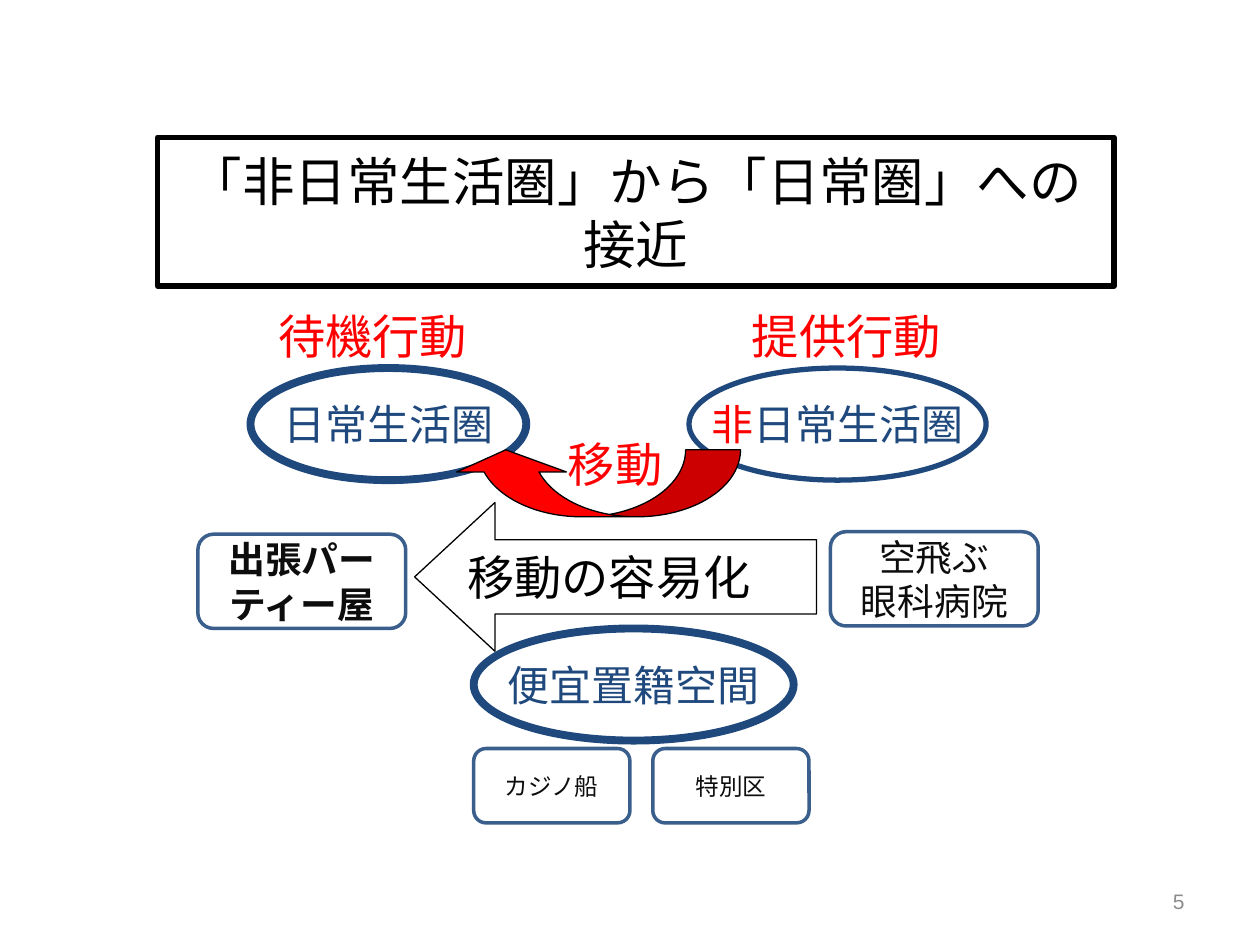
from dataclasses import dataclass

from pptx import Presentation
from pptx.dml.color import RGBColor
from pptx.enum import shapes, text
from pptx.util import Cm, Pt

Kind = shapes.MSO_SHAPE
Align = text.PP_ALIGN


@dataclass(frozen=True)
class Theme:
    font: str = "Calibri"
    number_font: str = "Arial"
    black: str = "000000"
    white: str = "FFFFFF"
    ink: str = "0D0D0D"
    red: str = "FF0000"
    navy: str = "1F497D"
    box_line: str = "3A5F8C"
    grey: str = "8C8C8C"
    title: float = 30
    label: float = 27
    zone: float = 24
    example: float = 21
    small: float = 13.5
    number: float = 12


THEME = Theme()


@dataclass(frozen=True)
class Words:
    content: str
    size: float
    color: str
    align: Align = Align.CENTER
    anchor: text.MSO_ANCHOR = text.MSO_ANCHOR.MIDDLE
    font: str = THEME.font
    bold: bool = False
    wrap: bool = True
    red_lead: str = ""


@dataclass(frozen=True)
class Place:
    left: float
    top: float
    width: float
    height: float

    def lengths(self) -> tuple[Cm, Cm, Cm, Cm]:
        return Cm(self.left), Cm(self.top), Cm(self.width), Cm(self.height)


@dataclass(frozen=True)
class Figure:
    kind: Kind
    place: Place
    line: str
    weight: float
    words: Words | None = None
    fill: str | None = None
    flips: tuple[str, ...] = ()
    adjustments: tuple[float, ...] = ()


def write(shape, words: Words) -> None:
    frame = shape.text_frame
    frame.word_wrap = words.wrap
    frame.vertical_anchor = words.anchor
    frame.text = words.red_lead or words.content
    if words.red_lead:
        frame.paragraphs[0].add_run().text = words.content
    for paragraph in frame.paragraphs:
        paragraph.alignment = words.align
        for run in paragraph.runs:
            is_lead = words.red_lead and run.text == words.red_lead
            run.font.name = words.font
            run.font.size = Pt(words.size)
            run.font.bold = words.bold
            run.font.color.rgb = RGBColor.from_string(THEME.red if is_lead else words.color)


def draw_text(slide, place: Place, words: Words) -> None:
    write(slide.shapes.add_textbox(*place.lengths()), words)


def draw_figure(slide, figure: Figure) -> None:
    shape = slide.shapes.add_shape(figure.kind, *figure.place.lengths())
    shape.shadow.inherit = False
    for index, value in enumerate(figure.adjustments):
        shape.adjustments[index] = value
    for flip in figure.flips:
        shape.element.spPr.xfrm.set(flip, "1")
    if figure.fill:
        shape.fill.solid()
        shape.fill.fore_color.rgb = RGBColor.from_string(figure.fill)
    else:
        shape.fill.background()
    shape.line.color.rgb = RGBColor.from_string(figure.line)
    shape.line.width = Pt(figure.weight)
    if figure.words:
        write(shape, figure.words)


def zone(left: float, top: float, width: float, name: str,
         weight: float = 4.5, red_lead: str = "") -> Figure:
    """An ellipse that names a sphere of life."""
    words = Words(name, THEME.zone, THEME.navy, wrap=False, red_lead=red_lead)
    return Figure(Kind.OVAL, Place(left, top, width, 2.26), THEME.navy, weight, words)


def example(place: Place, name: str, size: float, bold: bool = False) -> Figure:
    """A rounded box with an example of a service."""
    words = Words(name, size, THEME.ink, bold=bold)
    return Figure(Kind.ROUNDED_RECTANGLE, place, THEME.box_line, 2, words)


def draw_label(slide, left: float, top: float, width: float, name: str) -> None:
    draw_text(slide, Place(left, top, width, 1.42),
              Words(name, THEME.label, THEME.red, Align.LEFT, text.MSO_ANCHOR.TOP, wrap=False))


TITLE = Figure(Kind.RECTANGLE, Place(3.18, 2.77, 19.28, 3), THEME.black, 3,
               Words("「非日常生活圏」から「日常圏」への接近", THEME.title, THEME.black))
MOVE_ARROW = Figure(Kind.CURVED_DOWN_ARROW, Place(9.09, 9.07, 5.84, 1.35), THEME.black, 0.75,
                    fill=THEME.red, flips=("flipH", "flipV"), adjustments=(0.82, 1.64, 0.33))
EASE_ARROW = Figure(Kind.RIGHT_ARROW, Place(8.36, 10.13, 8.1, 3), THEME.black, 0.75,
                    Words("移動の容易化", THEME.label, THEME.black, Align.LEFT, wrap=False),
                    THEME.white, ("flipH",), (0.5, 0.54))
ZONES = (
    zone(5.05, 7.42, 5.56, "日常生活圏"),
    zone(13.89, 7.42, 5.99, "日常生活圏", 3, "非"),
)
FLAG_ZONE = zone(9.55, 12.67, 6.45, "便宜置籍空間")
EXAMPLES = (
    example(Place(16.74, 10.72, 4.19, 1.9), "空飛ぶ\n眼科病院", THEME.example),
    example(Place(3.99, 10.77, 4.19, 1.9), "出張パーティー屋", THEME.example, True),
    example(Place(9.55, 15.09, 3.15, 1.5), "カジノ船", THEME.small),
    example(Place(13.16, 15.09, 3.15, 1.5), "特別区", THEME.small),
)


def main() -> None:
    presentation = Presentation()
    presentation.slide_width, presentation.slide_height = Cm(25.4), Cm(19.05)
    slide = presentation.slides.add_slide(presentation.slide_layouts[6])

    draw_text(slide, Place(18.21, 17.65, 5.92, 1.02),
              Words("5", THEME.number, THEME.grey, Align.RIGHT, font=THEME.number_font))
    for figure in (TITLE, *ZONES, MOVE_ARROW):
        draw_figure(slide, figure)
    draw_label(slide, 11.2, 8.64, 2.44, "移動")
    draw_figure(slide, EASE_ARROW)
    draw_label(slide, 14.91, 6.07, 4.37, "提供行動")
    draw_label(slide, 5.36, 6.07, 4.37, "待機行動")
    for figure in (FLAG_ZONE, *EXAMPLES):
        draw_figure(slide, figure)

    presentation.save("out.pptx")


if __name__ == "__main__":
    main()
